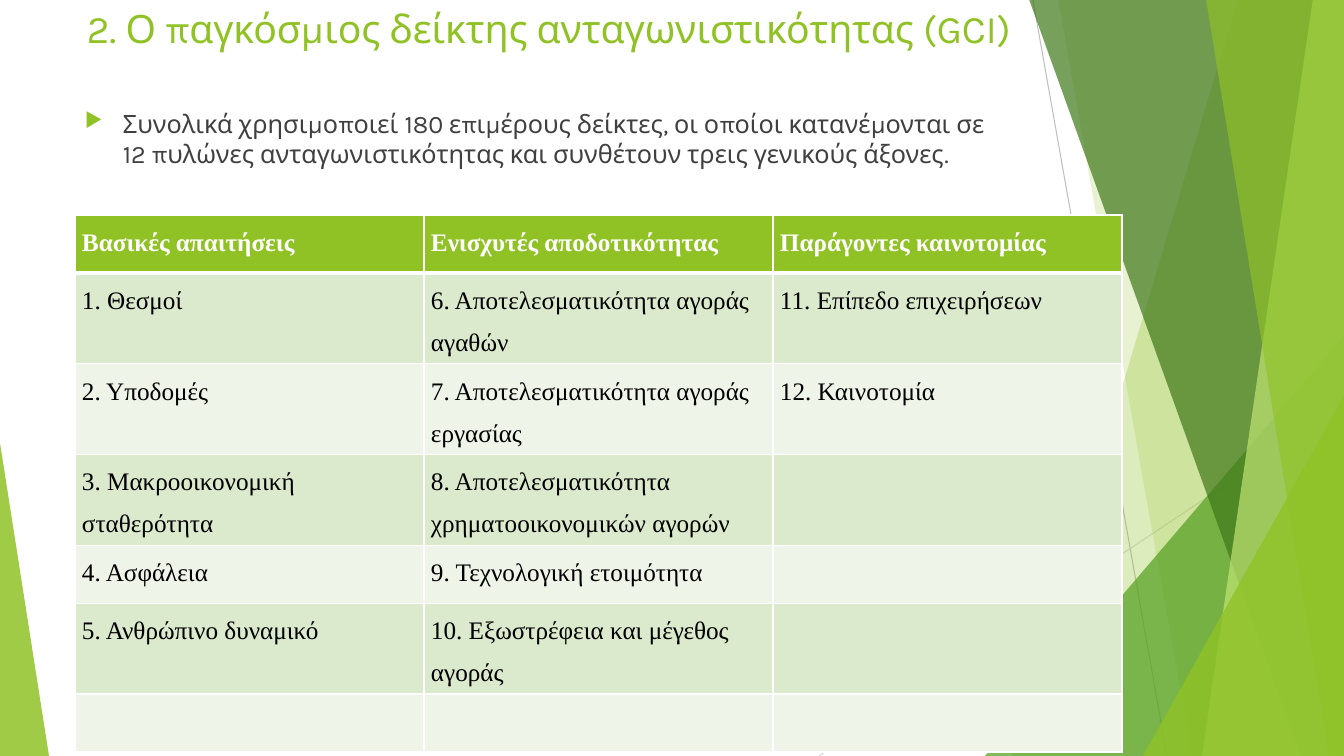
import pptx
import pptx.dml.color
import pptx.enum.shapes
import pptx.enum.text
import pptx.oxml
import pptx.oxml.ns
import pptx.util
import lxml.etree

PX = 914400 / 100.8
WIDTH, HEIGHT = 1344, 756
COLORS = {
    "lime": "90C226", "leaf": "54A021", "forest": "3F7819", "pale": "C0E474",
    "odd row": "DBE9CD", "even row": "EEF4E8", "white": "FFFFFF", "black": "000000",
    "body": "404040", "dark line": "BFBFBF", "light line": "D9D9D9",
}
qn = pptx.oxml.ns.qn


def px(*lengths):
    return [round(length * PX) for length in lengths]


def rgb(name):
    return pptx.dml.color.RGBColor.from_string(COLORS[name])


presentation = pptx.Presentation()
presentation.slide_width, presentation.slide_height = px(WIDTH, HEIGHT)
slide = presentation.slides.add_slide(presentation.slide_layouts[6])
shapes = slide.shapes

for ends, color in [
    ((1033, 0, 1167, HEIGHT), "dark line"),
    ((WIDTH, 406, 819, HEIGHT), "light line"),
]:
    line = shapes.add_connector(pptx.enum.shapes.MSO_CONNECTOR.STRAIGHT, *px(*ends))
    line.line.color.rgb = rgb(color)
    line.line.width = pptx.util.Pt(0.75)
    lxml.etree.SubElement(line._element.spPr, qn("a:effectLst"))

panels = [
    ("band", (1238, 1012), "lime", 30),
    ("band", (1058, 1192), "lime", 20),
    ("triangle", (985, 336, 359, 420, 1), "leaf", 72),
    ("band", (1029, 1301), "forest", 70),
    ("band", (1313, 1202), "pale", 70),
    ("band", (1206, 1329), "lime", 65),
    ("triangle", (1143, 396, 201, 360, 1), "lime", 80),
    ("triangle", (0, 443, 49, 313, 0), "lime", 85),
]
for kind, geometry, color, opacity in panels:
    if kind == "band":
        top_left, bottom_left = geometry
        builder = shapes.build_freeform(top_left, -1, scale=PX)
        builder.add_line_segments([(WIDTH, -1), (WIDTH, HEIGHT), (bottom_left, HEIGHT)])
        panel = builder.convert_to_shape()
    else:
        *box, apex = geometry
        panel = shapes.add_shape(pptx.enum.shapes.MSO_SHAPE.ISOSCELES_TRIANGLE, *px(*box))
        panel.adjustments[0] = apex
    panel.shadow.inherit = False
    panel.line.fill.background()
    panel.fill.solid()
    panel.fill.fore_color.rgb = rgb(color)
    tint = panel._element.spPr.find(".//" + qn("a:srgbClr"))
    lxml.etree.SubElement(tint, qn("a:alpha"), val=str(opacity * 1000))

texts = [
    ("2. Ο παγκόσμιος δείκτης ανταγωνιστικότητας (GCI)", (75, 0, 948, 80), 27.9, "lime"),
    ("Συνολικά χρησιμοποιεί 180 επιμέρους δείκτες, οι οποίοι κατανέμονται σε 12 πυλώνες "
     "ανταγωνιστικότητας και συνθέτουν τρεις γενικούς άξονες.", (75, 103, 948, 562), 18, "body"),
]
for text, box, size, color in texts:
    frame = shapes.add_textbox(*px(*box)).text_frame
    frame.word_wrap = True
    paragraph = frame.paragraphs[0]
    paragraph.text = text
    if color == "lime":
        paragraph.alignment = pptx.enum.text.PP_ALIGN.CENTER
    else:
        properties = paragraph._p.get_or_add_pPr()
        indent = px(38)[0]
        properties.set("marL", str(indent))
        properties.set("indent", str(-indent))
        bullet_color = lxml.etree.SubElement(properties, qn("a:buClr"))
        lxml.etree.SubElement(bullet_color, qn("a:srgbClr"), val=COLORS["lime"])
        lxml.etree.SubElement(properties, qn("a:buSzPct"), val="80000")
        lxml.etree.SubElement(properties, qn("a:buChar"), char="▶")
    paragraph.font.name = "Karla"
    paragraph.font.size = pptx.util.Pt(size)
    paragraph.font.color.rgb = rgb(color)

rows = [
    ("Βασικές απαιτήσεις", "Ενισχυτές αποδοτικότητας", "Παράγοντες καινοτομίας"),
    ("1. Θεσμοί", "6. Αποτελεσματικότητα αγοράς αγαθών", "11. Επίπεδο επιχειρήσεων"),
    ("2. Υποδομές", "7. Αποτελεσματικότητα αγοράς εργασίας", "12. Καινοτομία"),
    ("3. Μακροοικονομική σταθερότητα", "8. Αποτελεσματικότητα χρηματοοικονομικών αγορών", ""),
    ("4. Ασφάλεια", "9. Τεχνολογική ετοιμότητα", ""),
    ("5. Ανθρώπινο δυναμικό", "10. Εξωστρέφεια και μέγεθος αγοράς", ""),
    ("", "", ""),
]
table = shapes.add_table(len(rows), 3, *px(75, 215, 1047, 58 * len(rows))).table
for column in table.columns:
    column.width = px(349)[0]
for row_index, row in enumerate(rows):
    header = row_index == 0
    fill = "lime" if header else "odd row" if row_index % 2 else "even row"
    for column_index, text in enumerate(row):
        cell = table.cell(row_index, column_index)
        cell.fill.solid()
        cell.fill.fore_color.rgb = rgb(fill)
        cell.margin_left, cell.margin_right, cell.margin_top, cell.margin_bottom = px(7, 7, 0, 0)
        for position, side in enumerate("LRTB"):
            thick = (header and side == "B") or (row_index == 1 and side == "T")
            border = pptx.oxml.parse_xml(
                f'<a:ln{side} {pptx.oxml.ns.nsdecls("a")} w="{38100 if thick else 12700}">'
                f'<a:solidFill><a:srgbClr val="{COLORS["white"]}"/></a:solidFill></a:ln{side}>')
            cell._tc.get_or_add_tcPr().insert(position, border)
        paragraph = cell.text_frame.paragraphs[0]
        paragraph.text = text
        paragraph.line_spacing = 1.5
        paragraph.font.name = "Times New Roman"
        paragraph.font.size = pptx.util.Pt(18)
        paragraph.font.bold = header
        paragraph.font.color.rgb = rgb("white" if header else "black")

presentation.save("out.pptx")
